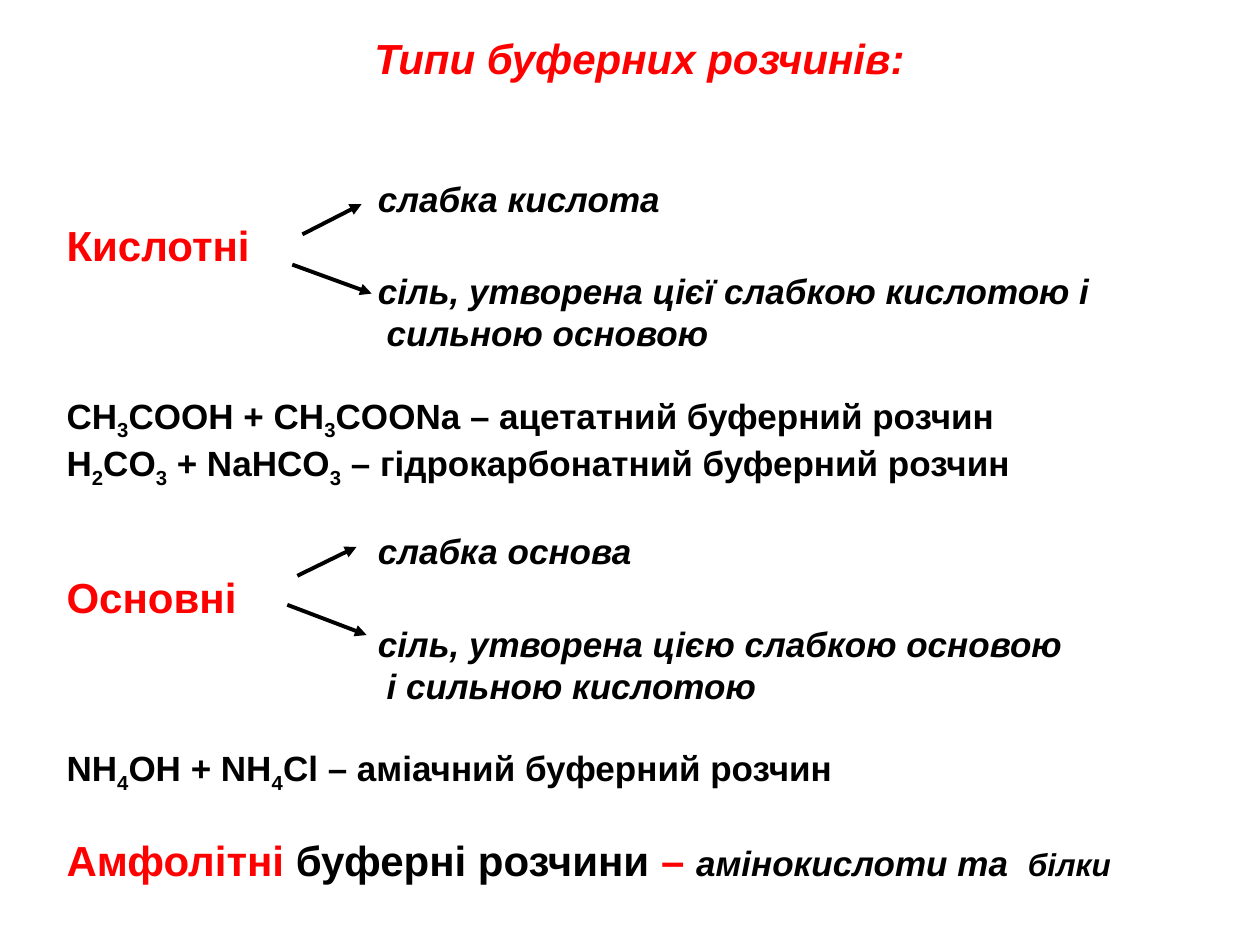
from lxml import etree
from pptx import Presentation
from pptx.dml.color import RGBColor
from pptx.enum.shapes import MSO_CONNECTOR
from pptx.enum.text import PP_ALIGN
from pptx.oxml.ns import qn
from pptx.util import Inches, Pt

STRAIGHT = MSO_CONNECTOR.STRAIGHT
CENTER = PP_ALIGN.CENTER
RED = RGBColor(0xFF, 0x00, 0x00)
BLACK = RGBColor(0x00, 0x00, 0x00)
COMPONENT_INDENT = 2.47
CONTINUATION_INDENT = 2.54
LINE_GAP = 23  # height of one 20 pt line, in points

presentation = Presentation()
presentation.slide_width = Inches(10)
presentation.slide_height = Inches(7.5)
slide = presentation.slides.add_slide(presentation.slide_layouts[6])

text_box = slide.shapes.add_textbox(Inches(0.43), Inches(0.21), Inches(9.29), Inches(7.17))
text_frame = text_box.text_frame
text_frame.word_wrap = True


def add_paragraph(indent=0, gap=0):
    """Add a paragraph with a left indent in inches and space before it in points."""
    is_first = not text_frame.paragraphs[0].runs
    paragraph = text_frame.paragraphs[0] if is_first else text_frame.add_paragraph()
    paragraph.space_before = Pt(gap)
    properties = paragraph._p.get_or_add_pPr()
    properties.set("marL", str(Inches(indent)))
    properties.set("indent", "0")
    return paragraph


def add_run(paragraph, text, size=20, color=BLACK, italic=False, subscript=False):
    run = paragraph.add_run()
    run.text = text
    run.font.name = "Arial"
    run.font.size = Pt(size)
    run.font.bold = True
    run.font.italic = italic
    run.font.color.rgb = color
    if subscript:
        run.font._element.set("baseline", "-25000")


title = add_paragraph()
title.alignment = CENTER
add_run(title, "Типи буферних розчинів:", 24, RED, italic=True)

# Gap above, name, weak component, salt in two lines, example formulas;
# "_" marks the digit after it as a subscript.
buffer_types = [
    (54, "Кислотні", "слабка кислота",
     "сіль, утворена цієї слабкою кислотою і", "сильною основою",
     ["CH_3COOH + CH_3COONa – ацетатний буферний розчин",
      "H_2CO_3 + NaHCO_3 – гідрокарбонатний буферний розчин"]),
    (LINE_GAP, "Основні", "слабка основа",
     "сіль, утворена цією слабкою основою", "і сильною кислотою",
     ["NH_4OH + NH_4Cl – аміачний буферний розчин"]),
]
for gap, name, weak_component, salt, salt_continued, formulas in buffer_types:
    add_run(add_paragraph(COMPONENT_INDENT, gap), weak_component, italic=True)
    add_run(add_paragraph(), name, 24, RED)
    add_run(add_paragraph(COMPONENT_INDENT), salt, italic=True)
    add_run(add_paragraph(CONTINUATION_INDENT), salt_continued, italic=True)
    for index, formula in enumerate(formulas):
        paragraph = add_paragraph(gap=0 if index else LINE_GAP)
        start, *parts = formula.split("_")
        add_run(paragraph, start)
        for part in parts:
            add_run(paragraph, part[0], subscript=True)
            if part[1:]:
                add_run(paragraph, part[1:])

ampholytes = add_paragraph(gap=LINE_GAP)
add_run(ampholytes, "Амфолітні ", 24, RED)
add_run(ampholytes, "буферні розчини ", 24)
add_run(ampholytes, "– ", 24, RED)
add_run(ampholytes, "амінокислоти та  ", italic=True)
add_run(ampholytes, "білки", 18, italic=True)

arrows = [
    (2.4, 1.86, 2.87, 1.62),
    (2.32, 2.1, 2.95, 2.33),
    (2.36, 4.57, 2.83, 4.34),
    (2.28, 4.8, 2.91, 5.04),
]
for ends in arrows:
    arrow = slide.shapes.add_connector(STRAIGHT, *(Inches(value) for value in ends))
    arrow.line.color.rgb = BLACK
    arrow.line.width = Pt(2.25)
    etree.SubElement(arrow.line._get_or_add_ln(), qn("a:tailEnd"), type="triangle")
    etree.SubElement(arrow._element.spPr, qn("a:effectLst"))

presentation.save("out.pptx")
